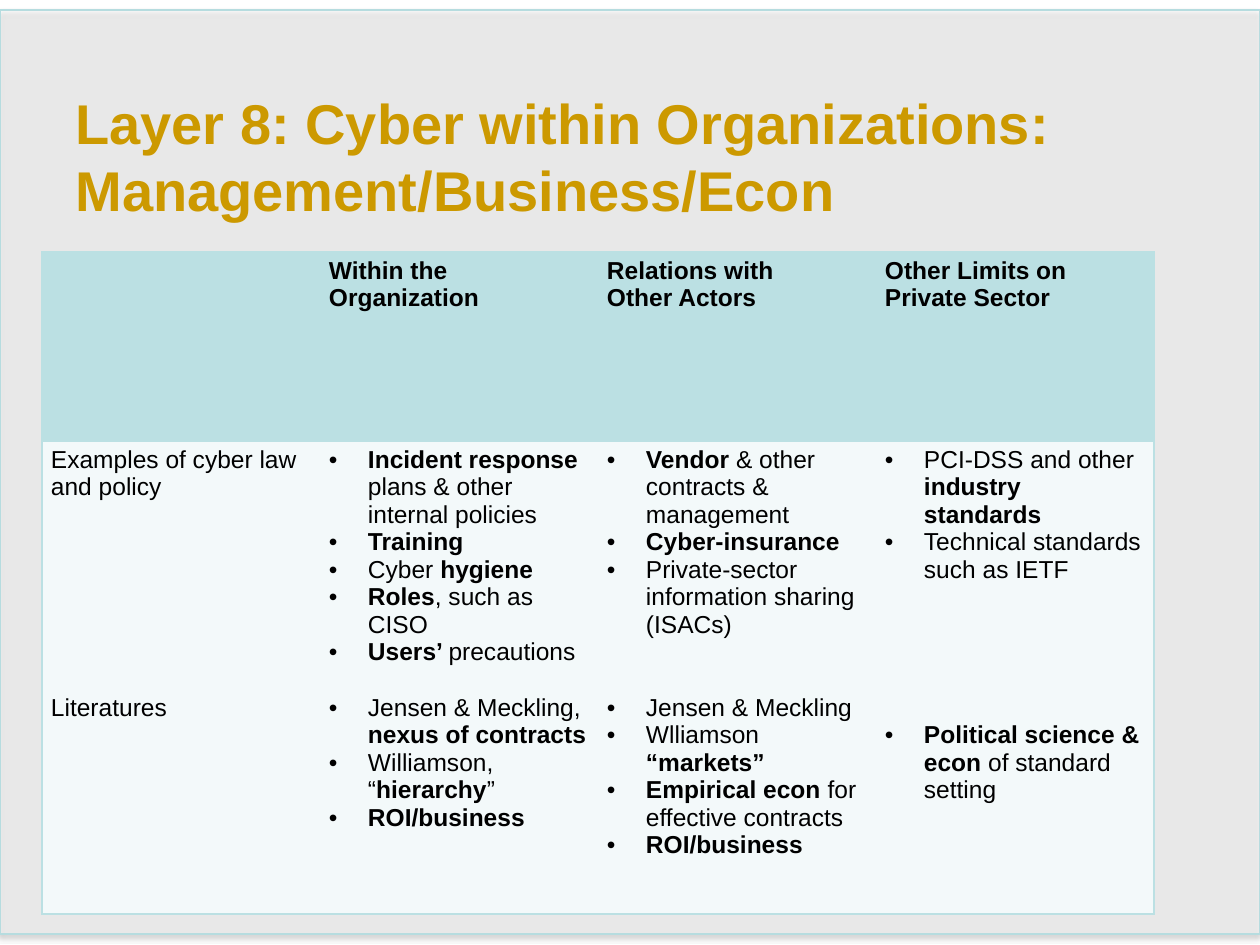
from lxml.etree import SubElement
from pptx import Presentation
from pptx.dml.color import RGBColor
from pptx.enum.shapes import MSO_SHAPE
from pptx.enum.text import MSO_ANCHOR
from pptx.oxml import parse_xml
from pptx.oxml.ns import nsdecls, qn
from pptx.util import Emu, Pt

PX = 914400 / 126
LINE = 15.75  # points taken by one line of table text


def px(*lengths):
    """Turn pixel lengths into EMU."""
    return [Emu(round(length * PX)) for length in lengths]


def rgb(code):
    return RGBColor.from_string(code)


prs = Presentation()
prs.slide_width, prs.slide_height = px(1260, 945)
slide = prs.slides.add_slide(prs.slide_layouts[6])

# Translucent panel with a soft shadow
panel = slide.shapes.add_shape(MSO_SHAPE.RECTANGLE, *px(0, 10, 1260, 924))
panel.fill.solid()
panel.fill.fore_color.rgb = rgb("FFFFFF")
panel_color = panel.fill._xPr.find(qn("a:solidFill"))[0]
SubElement(panel_color, qn("a:alpha"), val="46000")
panel.line.color.rgb = rgb("B6DCDF")
panel.line.width = Pt(0.75)
panel._element.spPr.append(parse_xml(
    f'<a:effectLst {nsdecls("a")}><a:outerShdw blurRad="39370" dist="22860" dir="5400000" '
    'rotWithShape="0"><a:srgbClr val="000000"><a:alpha val="35000"/></a:srgbClr>'
    '</a:outerShdw></a:effectLst>'))

# Title
title = slide.shapes.add_textbox(*px(63, 116, 1134, 79)).text_frame
title.word_wrap = True
title.vertical_anchor = MSO_ANCHOR.MIDDLE
title.text = "Layer 8: Cyber within Organizations:\vManagement/Business/Econ"
title_format = {"name": "Arial", "size": Pt(32), "bold": True}
for run in title.paragraphs[0].runs:
    for key, value in title_format.items():
        setattr(run.font, key, value)
    run.font.color.rgb = rgb("CC9900")

# Each paragraph: (lines of space before, text with bold parts between asterisks)
headings = [
    [],
    [(0, "*Within the*"), (0, "*Organization*")],
    [(0, "*Relations with*"), (0, "*Other Actors*")],
    [(0, "*Other Limits on Private Sector*")],
]
details = [
    [(0, "Examples of cyber law and policy"), (7, "Literatures")],
    [(0, "*Incident response *plans & other internal policies"),
     (0, "*Training*"),
     (0, "Cyber *hygiene*"),
     (0, "*Roles*, such as CISO"),
     (0, "*Users’ *precautions"),
     (1, "Jensen & Meckling, *nexus of contracts*"),
     (0, "Williamson, “*hierarchy*”"),
     (0, "*ROI/business*")],
    [(0, "*Vendor* & other contracts & management"),
     (0, "*Cyber-insurance*"),
     (0, "Private-sector information sharing (ISACs)"),
     (2, "Jensen & Meckling"),
     (0, "Wlliamson *“markets”*"),
     (0, "*Empirical econ *for effective contracts"),
     (0, "*ROI/business*")],
    [(0, "PCI-DSS and other *industry standards*"),
     (0, "Technical standards such as IETF"),
     (5, "*Political science & econ *of standard setting")],
]
row_heights = px(189, 473)
row_fills = ["BBE0E3", "F3F9FA"]
margin_x, margin_y, indent = px(9, 5, 39)
cell_format = {"margin_left": margin_x, "margin_right": margin_x,
               "margin_top": margin_y, "margin_bottom": margin_y}
text_format = {"name": "Arial", "size": Pt(14)}

table = slide.shapes.add_table(2, 4, *px(42, 252, 1112, 662)).table
for column in table.columns:
    column.width = px(278)[0]

for r, row_texts in enumerate([headings, details]):
    table.rows[r].height = row_heights[r]
    for c, paragraphs in enumerate(row_texts):
        cell = table.cell(r, c)
        for key, value in cell_format.items():
            setattr(cell, key, value)
        cell.fill.solid()
        cell.fill.fore_color.rgb = rgb(row_fills[r])

        # Lines above and below each row, and at the outer sides only
        drawn = {"lnL": c == 0, "lnR": c == 3, "lnT": True, "lnB": True}
        for i, (side, shown) in enumerate(drawn.items()):
            paint = ('<a:solidFill><a:srgbClr val="BBE0E3"/></a:solidFill>'
                     if shown else "<a:noFill/>")
            cell._tc.tcPr.insert(i, parse_xml(
                f'<a:{side} {nsdecls("a")} w="12700">{paint}</a:{side}>'))

        frame = cell.text_frame
        for n, (gap, text) in enumerate(paragraphs):
            paragraph = frame.add_paragraph() if n else frame.paragraphs[0]
            if r == 1 and c > 0:
                properties = paragraph._p.get_or_add_pPr()
                properties.set("marL", str(indent))
                properties.set("indent", str(-indent))
                SubElement(properties, qn("a:buFont"), typeface="Arial")
                SubElement(properties, qn("a:buChar"), char="•")
            if gap:
                paragraph.space_before = Pt(gap * LINE)
            for k, part in enumerate(text.split("*")):
                if part:
                    run = paragraph.add_run()
                    run.text = part
                    run.font.bold = k % 2 == 1
                    for key, value in text_format.items():
                        setattr(run.font, key, value)
                    run.font.color.rgb = rgb("000000")

prs.save("out.pptx")
